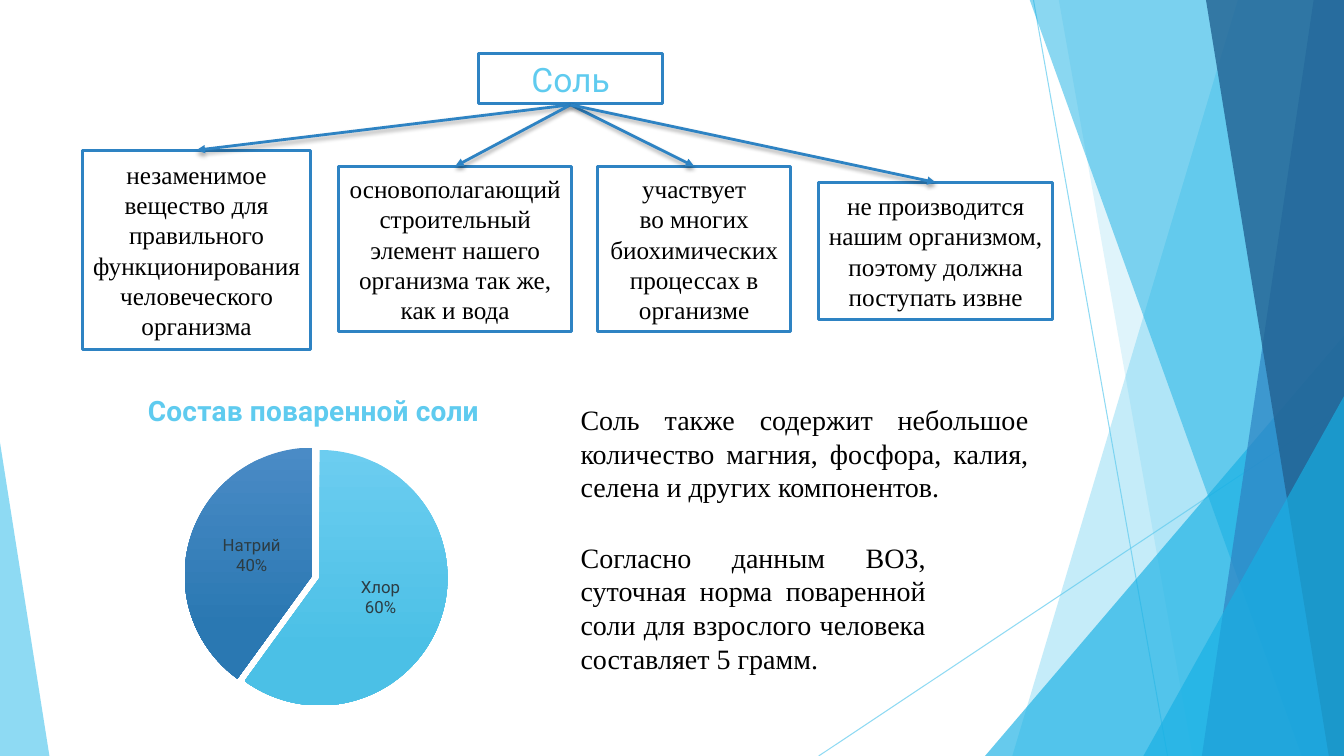
import pptx
import pptx.chart.data
import pptx.dml.color
import pptx.enum.chart
import pptx.enum.shapes
import pptx.enum.text
import pptx.oxml
import pptx.oxml.ns
import pptx.util

Inches = pptx.util.Inches
Pt = pptx.util.Pt
Align = pptx.enum.text.PP_ALIGN
Anchor = pptx.enum.text.MSO_ANCHOR
Shape = pptx.enum.shapes.MSO_SHAPE
qn = pptx.oxml.ns.qn


class Deck:
    colors = {
        "sky": "5FCBEF", "cyan": "17B0E4", "blue": "2E83C3", "navy": "226292",
        "white": "FFFFFF", "black": "000000", "slate": "2C3C43",
        "sky top": "6CCDF0", "sky end": "4BC0E6",
        "blue top": "4A8BC6", "blue end": "2A78B2",
    }
    serif = "Times New Roman"
    sans = "Roboto"

    def __init__(self):
        self.file = pptx.Presentation()
        self.file.slide_width = Inches(13.33)
        self.file.slide_height = Inches(7.5)
        self.slide = self.file.slides.add_slide(self.file.slide_layouts[6])
        self.shapes = self.slide.shapes

    def color(self, name):
        return pptx.dml.color.RGBColor.from_string(self.colors[name])

    def xml(self, tag, body="", attrs=""):
        space = pptx.oxml.ns.nsdecls("a", "c")
        return pptx.oxml.parse_xml(f"<{tag} {space} {attrs}>{body}</{tag}>")

    def fade(self, shape, percent):
        for tone in shape.element.spPr.iter(qn("a:srgbClr")):
            tone.append(self.xml("a:alpha", attrs=f'val="{percent * 1000}"'))

    def pane(self, shape, color, percent):
        shape.shadow.inherit = False
        shape.fill.solid()
        shape.fill.fore_color.rgb = self.color(color)
        shape.line.fill.background()
        self.fade(shape, percent)

    def shard(self, points, color, percent):
        spots = [(Inches(x), Inches(y)) for x, y in points]
        form = self.shapes.build_freeform(*spots[0], scale=1.0)
        form.add_line_segments(spots[1:], close=True)
        self.pane(form.convert_to_shape(), color, percent)

    def wedge(self, frame, tip, color, percent):
        shape = self.shapes.add_shape(Shape.ISOSCELES_TRIANGLE, *map(Inches, frame))
        shape.adjustments[0] = tip
        self.pane(shape, color, percent)

    def line(self, start, end, color, width):
        line = self.shapes.add_connector(
            pptx.enum.shapes.MSO_CONNECTOR.STRAIGHT, *map(Inches, start + end))
        line.line.color.rgb = self.color(color)
        line.line.width = Pt(width)
        return line

    def ray(self, start, end):
        line = self.line(start, end, "sky", 0.75)
        self.fade(line, 70)
        line.element.spPr.append(self.xml("a:effectLst"))

    def arrow(self, start, end):
        line = self.line(start, end, "blue", 2)
        line.element.spPr.find(qn("a:ln")).append(
            self.xml("a:tailEnd", attrs='type="triangle"'))
        line.element.spPr.append(self.xml(
            "a:effectLst",
            f'<a:outerShdw blurRad="{Pt(3)}" dist="{Pt(2)}" dir="5400000" rotWithShape="0">'
            f'<a:srgbClr val="{self.colors["black"]}"><a:alpha val="35000"/></a:srgbClr>'
            '</a:outerShdw>'))

    def label(self, shape, text, size, font, color, align, anchor):
        frame = shape.text_frame
        frame.word_wrap = True
        frame.vertical_anchor = anchor
        frame.text = text
        for para in frame.paragraphs:
            para.alignment = align
            for run in para.runs:
                run.font.size = Pt(size)
                run.font.name = font
                run.font.color.rgb = self.color(color)

    def text(self, frame, text, anchor):
        box = self.shapes.add_textbox(*map(Inches, frame))
        self.label(box, text, 20, self.serif, "black", Align.JUSTIFY, anchor)

    def box(self, frame, text, size=18, font=serif, color="black"):
        box = self.shapes.add_shape(Shape.RECTANGLE, *map(Inches, frame))
        box.shadow.inherit = False
        box.fill.solid()
        box.fill.fore_color.rgb = self.color("white")
        box.line.color.rgb = self.color("blue")
        box.line.width = Pt(2.25)
        self.label(box, text, size, font, color, Align.CENTER, Anchor.MIDDLE)

    def pie(self, frame, title, parts, tones):
        data = pptx.chart.data.CategoryChartData()
        data.categories = list(parts)
        data.add_series("Series 1", list(parts.values()))
        chart = self.shapes.add_chart(
            pptx.enum.chart.XL_CHART_TYPE.PIE, *map(Inches, frame), data).chart
        chart.font.name = self.sans
        chart.font.size = Pt(10)
        chart.font.color.rgb = self.color("black")
        chart.has_legend = False
        chart.has_title = True
        chart.chart_title.text_frame.text = title
        font = chart.chart_title.text_frame.paragraphs[0].runs[0].font
        font.name, font.size, font.bold = self.sans, Pt(20), True
        font.color.rgb = self.color("sky")

        plot = chart.plots[0]
        plot.vary_by_categories = True
        series = plot.series[0]
        for index, tone in enumerate(tones):
            fill = series.points[index].format.fill
            fill.gradient()
            fill.gradient_angle = 270
            for stop, end, place in zip(fill.gradient_stops, ("top", "end"), (0, 0.78)):
                stop.color.rgb = self.color(f"{tone} {end}")
                stop.position = place
        first = series._element.find(qn("c:dPt"))
        first.addprevious(self.xml("c:explosion", attrs='val="3"'))

        plot.has_data_labels = True
        labels = plot.data_labels
        labels.show_value = False
        labels.show_percentage = True
        labels.show_category_name = True
        labels.number_format = "0%"
        labels.number_format_is_linked = False
        labels.position = pptx.enum.chart.XL_LABEL_POSITION.CENTER
        labels.font.name = self.sans
        labels.font.size = Pt(12)
        labels.font.color.rgb = self.color("slate")
        labels._element.find(qn("c:showBubbleSize")).addnext(
            self.xml("c:separator", "\n"))

        area = chart._chartSpace.find(".//" + qn("c:plotArea"))
        for old in area.findall(qn("c:layout")):
            area.remove(old)
        sides = {"x": 0.25, "y": 0.2, "w": 0.51, "h": 0.76}
        body = '<c:layoutTarget val="inner"/><c:xMode val="edge"/><c:yMode val="edge"/>'
        body += "".join(f'<c:{side} val="{part}"/>' for side, part in sides.items())
        area.insert(0, self.xml("c:layout", f"<c:manualLayout>{body}</c:manualLayout>"))


def main():
    deck = Deck()
    right, top, base = 13.33, -0.01, 7.5
    deck.ray((10.25, 0), (11.58, base))
    deck.ray((right, 4.03), (8.12, base))

    def shard(high, low, color, percent):
        deck.shard([(high, top), (right, top), (right, base), (low, base)], color, percent)

    shard(12.28, 10.04, "sky", 36)
    shard(10.5, 11.83, "sky", 20)
    deck.wedge((9.77, 3.33, 3.56, 4.17), 1, "cyan", 66)
    shard(10.21, 12.91, "cyan", 50)
    shard(13.03, 11.92, "blue", 70)
    shard(11.96, 13.18, "navy", 80)
    deck.wedge((11.34, 3.93, 1.99, 3.57), 1, "cyan", 66)
    deck.wedge((0, 4.39, 0.49, 3.11), 0, "sky", 70)

    deck.text((5.66, 5.31, 3.62, 1.43),
              "Согласно данным ВОЗ, суточная норма поваренной соли для взрослого "
              "человека составляет 5 грамм.", Anchor.TOP)
    deck.box((4.75, 0.53, 1.82, 0.5), "Соль", 24, deck.sans, "sky")
    deck.pie((0.55, 3.72, 5.12, 3.45), "Состав поваренной соли",
             {"Хлор": 60, "Натрий": 40}, ("sky", "blue"))

    facts = [
        ((0.82, 1.49, 2.26, 1.98),
         "незаменимое вещество для правильного функционирования человеческого организма"),
        ((3.36, 1.65, 2.31, 1.64),
         "основополагающий строительный элемент нашего организма так же, как и вода"),
        ((5.93, 1.65, 1.91, 1.64),
         "участвует\nво многих биохимических процессах в организме"),
        ((8.12, 1.81, 2.32, 1.36),
         "не производится нашим организмом, поэтому должна поступать извне"),
    ]
    for frame, text in facts:
        deck.box(frame, text)
    for (left, head, width, _), _ in facts:
        deck.arrow((5.66, 1.04), (left + width / 2, head))

    deck.text((5.66, 3.96, 4.64, 1.07),
              "Соль также содержит небольшое количество магния, фосфора, калия, "
              "селена и других компонентов.", Anchor.MIDDLE)
    deck.file.save("out.pptx")


if __name__ == "__main__":
    main()
